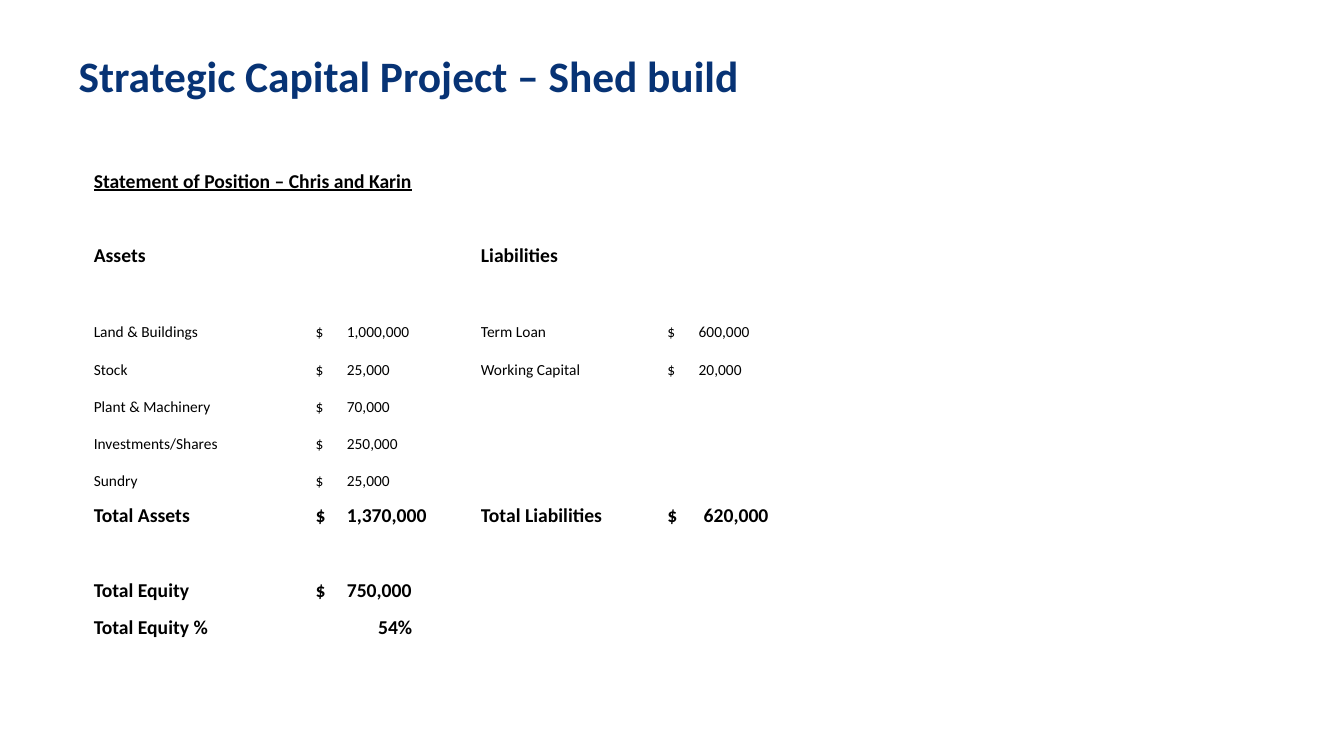
from dataclasses import dataclass
from lxml.etree import SubElement
from pptx import Presentation
from pptx.dml.color import RGBColor
from pptx.enum.text import MSO_ANCHOR, PP_ALIGN
from pptx.oxml.ns import qn
from pptx.util import Inches, Pt

NAVY = RGBColor(0x07, 0x33, 0x75)
BLACK = RGBColor(0, 0, 0)
WHITE = RGBColor(0xFF, 0xFF, 0xFF)
FONT = "Calibri"

COLUMN_WIDTHS = (2.16, 1.68, 1.81, 1.68)
ROW_COUNT = 13
TABLE_LEFT, TABLE_TOP, TABLE_HEIGHT = 0.92, 1.55, 4.8
ASSETS, ASSET_AMOUNTS, LIABILITIES, LIABILITY_AMOUNTS = range(4)


@dataclass
class Entry:
    row: int
    column: int
    text: str
    bold: bool = False
    underline: bool = False
    amount_tab: float = 0.31
    align: PP_ALIGN = PP_ALIGN.LEFT


def line_items(items: list[tuple[str, int]], column: int) -> list[Entry]:
    """Give each item a label and a dollar amount, from row 4 down."""
    entries = []
    for row, (label, amount) in enumerate(items, start=4):
        entries.append(Entry(row, column, label))
        entries.append(Entry(row, column + 1, f"$\t{amount:,}"))
    return entries


ENTRIES = [
    Entry(0, ASSETS, "Statement of Position – Chris and Karin", bold=True, underline=True),
    Entry(2, ASSETS, "Assets", bold=True),
    Entry(2, LIABILITIES, "Liabilities", bold=True),
    *line_items([("Land & Buildings", 1_000_000), ("Stock", 25_000),
                 ("Plant & Machinery", 70_000), ("Investments/Shares", 250_000),
                 ("Sundry", 25_000)], ASSETS),
    *line_items([("Term Loan", 600_000), ("Working Capital", 20_000)], LIABILITIES),
    Entry(9, ASSETS, "Total Assets", bold=True),
    Entry(9, ASSET_AMOUNTS, "$\t1,370,000", bold=True),
    Entry(9, LIABILITIES, "Total Liabilities", bold=True),
    Entry(9, LIABILITY_AMOUNTS, "$\t620,000", bold=True, amount_tab=0.36),
    Entry(11, ASSETS, "Total Equity", bold=True),
    Entry(11, ASSET_AMOUNTS, "$\t750,000", bold=True),
    Entry(12, ASSETS, "Total Equity %", bold=True),
    Entry(12, ASSET_AMOUNTS, "54%", bold=True, align=PP_ALIGN.CENTER),
]


def add_title(page, text: str) -> None:
    title = page.shapes.title
    title.left, title.top = Inches(0.68), Inches(0.44)
    title.width, title.height = Inches(8.27), Inches(1.1)
    title.text_frame.vertical_anchor = MSO_ANCHOR.TOP
    para = title.text_frame.paragraphs[0]
    para.text = text
    para.alignment = PP_ALIGN.LEFT
    para.font.name, para.font.size, para.font.bold = FONT, Pt(31), True
    para.font.color.rgb = NAVY


def add_statement_table(page):
    frame = page.shapes.add_table(
        ROW_COUNT, len(COLUMN_WIDTHS), Inches(TABLE_LEFT), Inches(TABLE_TOP),
        Inches(sum(COLUMN_WIDTHS)), Inches(TABLE_HEIGHT))
    table = frame.table
    table.first_row = table.horz_banding = False
    for column, width in zip(table.columns, COLUMN_WIDTHS):
        column.width = Inches(width)
    for cell in table.iter_cells():
        cell.fill.solid()
        cell.fill.fore_color.rgb = WHITE
        cell.vertical_anchor = MSO_ANCHOR.BOTTOM
        cell.margin_left = cell.margin_right = cell.margin_top = Inches(0.01)
        cell.margin_bottom = 0
    table.cell(0, 0).merge(table.cell(0, len(COLUMN_WIDTHS) - 1))
    return table


def fill_entry(table, entry: Entry) -> None:
    cell = table.cell(entry.row, entry.column)
    para = cell.text_frame.paragraphs[0]
    para.text = entry.text
    para.alignment = entry.align
    # Amounts line up on a tab stop after the dollar sign
    if "\t" in entry.text:
        cell.margin_left = Inches(0.05)
        tabs = SubElement(para._p.get_or_add_pPr(), qn("a:tabLst"))
        SubElement(tabs, qn("a:tab"), pos=str(Inches(entry.amount_tab)), algn="l")
    para.font.name = FONT
    para.font.size = Pt(14 if entry.bold else 11)
    para.font.bold = entry.bold
    para.font.underline = entry.underline
    para.font.color.rgb = BLACK


def main() -> None:
    deck = Presentation()
    deck.slide_width, deck.slide_height = Inches(13.33), Inches(7.5)
    page = deck.slides.add_slide(deck.slide_layouts[5])

    # Heading
    add_title(page, "Strategic Capital Project – Shed build")

    # Statement of position
    table = add_statement_table(page)
    for entry in ENTRIES:
        fill_entry(table, entry)

    deck.save("out.pptx")


if __name__ == "__main__":
    main()
